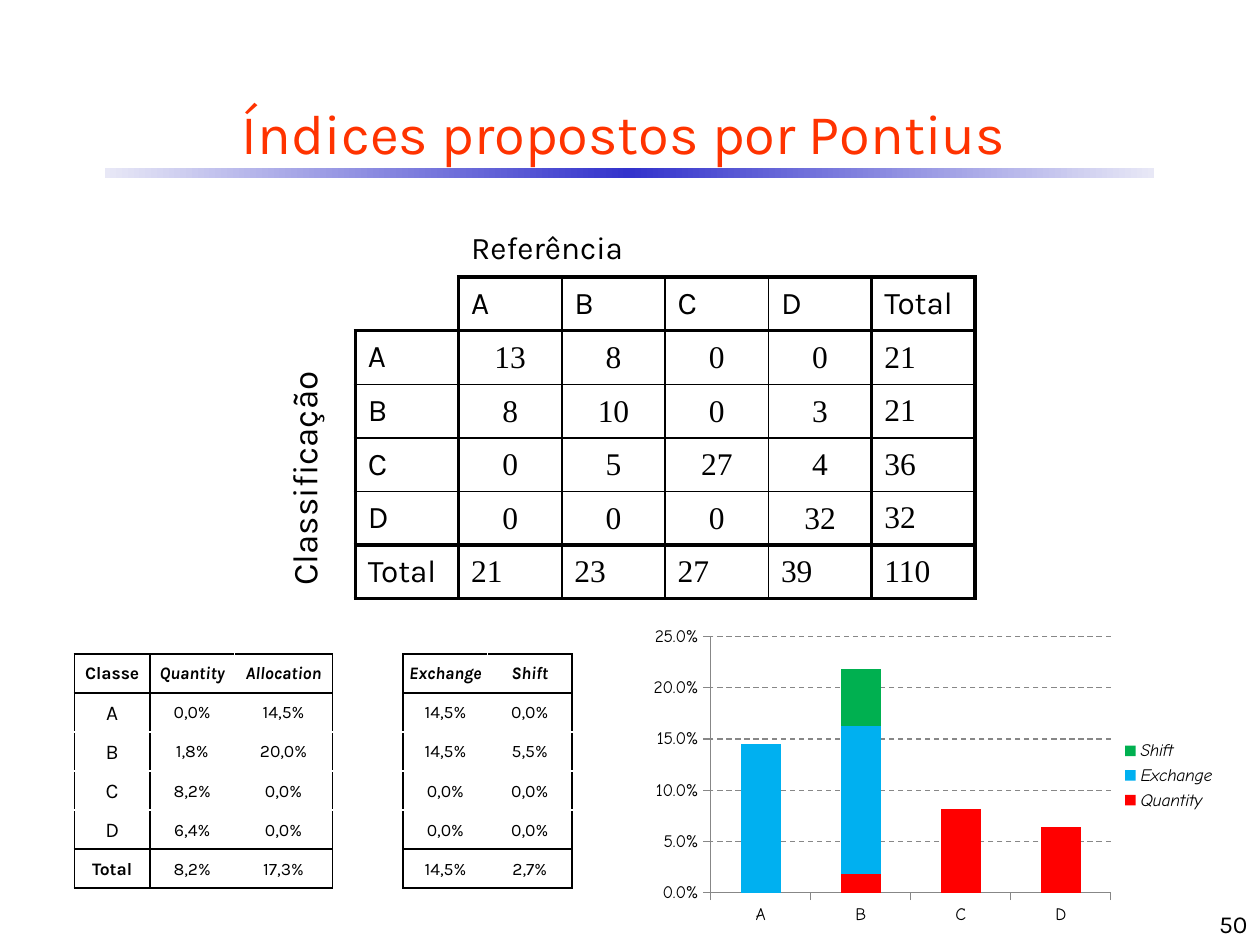
from copy import deepcopy

from lxml import etree
from pptx import Presentation
from pptx.chart.data import CategoryChartData
from pptx.dml.color import RGBColor
from pptx.enum.chart import XL_CHART_TYPE, XL_LEGEND_POSITION, XL_TICK_MARK
from pptx.enum.dml import MSO_LINE
from pptx.enum.shapes import MSO_SHAPE
from pptx.enum.text import MSO_ANCHOR, PP_ALIGN
from pptx.oxml.ns import qn
from pptx.util import Inches, Pt

LEFT, CENTER, RIGHT = PP_ALIGN.LEFT, PP_ALIGN.CENTER, PP_ALIGN.RIGHT
MIDDLE, BOTTOM = MSO_ANCHOR.MIDDLE, MSO_ANCHOR.BOTTOM
STACKED = XL_CHART_TYPE.COLUMN_STACKED
LEGEND_RIGHT = XL_LEGEND_POSITION.RIGHT
TICK_OUT = XL_TICK_MARK.OUTSIDE
RECTANGLE = MSO_SHAPE.RECTANGLE
DASH = MSO_LINE.DASH
KARLA, TIMES, COMIC = "Karla", "Times New Roman", "Comic Neue"
BLACK, WHITE, GRAY = "000000", "FFFFFF", "878787"
PLAIN_TABLE = "{2D5ABB26-0587-4C30-8999-92F81FD0307C}"

CONFUSION = [
    ["A", "B", "C", "D", "Total"],
    ["A", "13", "8", "0", "0", "21"],
    ["B", "8", "10", "0", "3", "21"],
    ["C", "0", "5", "27", "4", "36"],
    ["D", "0", "0", "0", "32", "32"],
    ["Total", "21", "23", "27", "39", "110"],
]
INDICES = [
    ["Classe", "Quantity", "Allocation", "", "Exchange", "Shift"],
    ["A", "0,0%", "14,5%", "", "14,5%", "0,0%"],
    ["B", "1,8%", "20,0%", "", "14,5%", "5,5%"],
    ["C", "8,2%", "0,0%", "", "0,0%", "0,0%"],
    ["D", "6,4%", "0,0%", "", "0,0%", "0,0%"],
    ["Total", "8,2%", "17,3%", "", "14,5%", "2,7%"],
]
CHART_SERIES = [
    ("Quantity", "FF0000", [0, 0.018, 0.082, 0.064]),
    ("Exchange", "00B0F0", [0.145, 0.145, 0, 0]),
    ("Shift", "00B050", [0, 0.055, 0, 0]),
]


def rgb(value):
    return RGBColor.from_string(value)


def write(frame, text, size=18, font=KARLA, color=BLACK, align=LEFT,
          bold=False, italic=False, spacing=None):
    paragraph = frame.paragraphs[0]
    paragraph.alignment = align
    if spacing:
        paragraph.line_spacing = Pt(spacing)
    if not text:
        paragraph._p.get_or_add_endParaRPr().set("sz", str(size * 100))
        return
    run = paragraph.add_run()
    run.text = text
    run.font.size, run.font.name = Pt(size), font
    run.font.bold, run.font.italic = bold, italic
    run.font.color.rgb = rgb(color)


def add_label(slide, place, text, anchor, **style):
    frame = slide.shapes.add_textbox(*map(Inches, place)).text_frame
    frame.word_wrap = True
    frame.vertical_anchor = anchor
    write(frame, text, **style)


def add_title_rule(slide):
    rule = slide.shapes.add_shape(
        RECTANGLE, Inches(0.83), Inches(1.33), Inches(8.33), Inches(0.08))
    rule.shadow.inherit = False
    rule.line.fill.background()
    rule.fill.gradient()
    rule.fill.gradient_angle = 0
    stops = rule.fill.gradient_stops
    stops[0]._gs.addnext(deepcopy(stops[0]._gs))
    for stop, position, color in zip(
            rule.fill.gradient_stops, (0, 0.5, 1), ("E8E8F6", "3333CC", "E8E8F6")):
        stop.position = position
        stop.color.rgb = rgb(color)


def add_grid(slide, left, top, widths, heights):
    frame = slide.shapes.add_table(
        len(heights), len(widths), Inches(left), Inches(top),
        Inches(sum(widths)), Inches(sum(heights)))
    table = frame.table
    table.first_row = table.horz_banding = False
    table._tbl.tblPr.find(qn("a:tableStyleId")).text = PLAIN_TABLE
    for column, width in zip(table.columns, widths):
        column.width = Inches(width)
    for row, height in zip(table.rows, heights):
        row.height = Inches(height)
    for cell in table.iter_cells():
        cell.vertical_anchor = MIDDLE
        cell.fill.background()
    return table


def set_borders(cell, **edges):
    properties = cell._tc.get_or_add_tcPr()
    for index, side in enumerate(side for side in "LRTB" if side in edges):
        color, width = edges[side]
        line = etree.Element(qn(f"a:ln{side}"), w=str(Pt(width)))
        fill = etree.SubElement(line, qn("a:solidFill"))
        etree.SubElement(fill, qn("a:srgbClr"), val=color)
        properties.insert(index, line)


def tighten(cell):
    cell.margin_left = cell.margin_right = cell.margin_top = Inches(0.01)
    cell.margin_bottom = 0


def add_confusion_matrix(slide):
    table = add_grid(slide, 2.33, 1.75, [0.49] + [0.82] * 6, [0.45] + [0.425] * 6)
    reference, classification = table.cell(0, 2), table.cell(2, 0)
    reference.merge(table.cell(0, 6))
    classification.merge(table.cell(6, 0))
    write(reference.text_frame, "Referência")
    write(classification.text_frame, "Classificação", size=20, spacing=15)
    classification._tc.get_or_add_tcPr().set("vert", "vert270")

    def edge(boundary):
        return BLACK, 2.25 if boundary in (1, 2, 6, 7) else 1

    for r, values in enumerate(CONFUSION, 1):
        for c, value in enumerate(values, 7 - len(values)):
            cell = table.cell(r, c)
            set_borders(cell, L=edge(c), R=edge(c + 1), T=edge(r), B=edge(r + 1))
            inner = 2 <= r <= 5 and 2 <= c <= 5
            if inner:
                tighten(cell)
            write(cell.text_frame, value, font=TIMES if value.isdigit() else KARLA,
                  align=CENTER if inner else LEFT)


def add_index_table(slide):
    table = add_grid(slide, 0.59, 5.19, [0.6, 0.67, 0.78, 0.56, 0.67, 0.67], [0.31] * 6)

    def edge(boundary, hidden):
        return WHITE if boundary in hidden else BLACK, 1

    for r, values in enumerate(INDICES):
        for c, value in enumerate(values):
            cell = table.cell(r, c)
            tighten(cell)
            if value:
                set_borders(cell, L=edge(c, (2, 5)), R=edge(c + 1, (2, 5)),
                            T=edge(r, (2, 3, 4)), B=edge(r + 1, (2, 3, 4)))
            write(cell.text_frame, value, size=12 if len(value) == 1 else 10,
                  align=CENTER, bold=r == 0 or value == "Total",
                  italic=r == 0 and c > 0)


def place_plot(chart, **fractions):
    plot_area = chart._chartSpace.chart.plotArea
    for old in plot_area.findall(qn("c:layout")):
        plot_area.remove(old)
    layout = etree.Element(qn("c:layout"))
    manual = etree.SubElement(layout, qn("c:manualLayout"))
    settings = {"layoutTarget": "inner", "xMode": "edge", "yMode": "edge", **fractions}
    for tag, value in settings.items():
        etree.SubElement(manual, qn(f"c:{tag}"), val=str(value))
    plot_area.insert(0, layout)


def add_index_chart(slide):
    data = CategoryChartData(number_format="0.0%")
    data.categories = ["A", "B", "C", "D"]
    for name, _, values in CHART_SERIES:
        data.add_series(name, values)
    chart = slide.shapes.add_chart(
        STACKED, Inches(5.08), Inches(4.93), Inches(4.67), Inches(2.45), data).chart
    chart.has_title = False
    chart.font.name, chart.font.size = COMIC, Pt(10)
    chart.font.color.rgb = rgb(BLACK)
    chart.has_legend = True
    chart.legend.position = LEGEND_RIGHT
    chart.legend.include_in_layout = False
    chart.legend.font.name, chart.legend.font.size = COMIC, Pt(10)
    chart.legend.font.italic = True
    plot = chart.plots[0]
    plot.gap_width, plot.overlap = 150, 100
    plot.vary_by_categories = False
    for series, (_, color, _) in zip(plot.series, CHART_SERIES):
        series.format.fill.solid()
        series.format.fill.fore_color.rgb = rgb(color)
    percent = chart.value_axis
    percent.minimum_scale, percent.maximum_scale, percent.major_unit = 0, 0.25, 0.05
    percent.tick_labels.number_format = "0.0%"
    percent.tick_labels.number_format_is_linked = False
    gridline = percent.major_gridlines.format.line
    gridline.dash_style = DASH
    for line in (gridline, percent.format.line, chart.category_axis.format.line):
        line.color.rgb = rgb(GRAY)
        line.width = Pt(0.75)
    for axis in (percent, chart.category_axis):
        axis.major_tick_mark = TICK_OUT
    place_plot(chart, x=0.12, y=0.05, w=0.68, h=0.83)


def main():
    deck = Presentation()
    deck.slide_width, deck.slide_height = Inches(10), Inches(7.5)
    slide = deck.slides.add_slide(deck.slide_layouts[6])
    add_title_rule(slide)
    add_label(slide, (0.19, 0.67, 9.53, 0.75), "Índices propostos por Pontius",
              MIDDLE, size=32, color="FF3300", align=CENTER)
    add_confusion_matrix(slide)
    add_index_table(slide)
    add_index_chart(slide)
    add_label(slide, (7.92, 7, 2.08, 0.5), "50", BOTTOM, size=14, align=RIGHT)
    deck.save("out.pptx")


if __name__ == "__main__":
    main()
